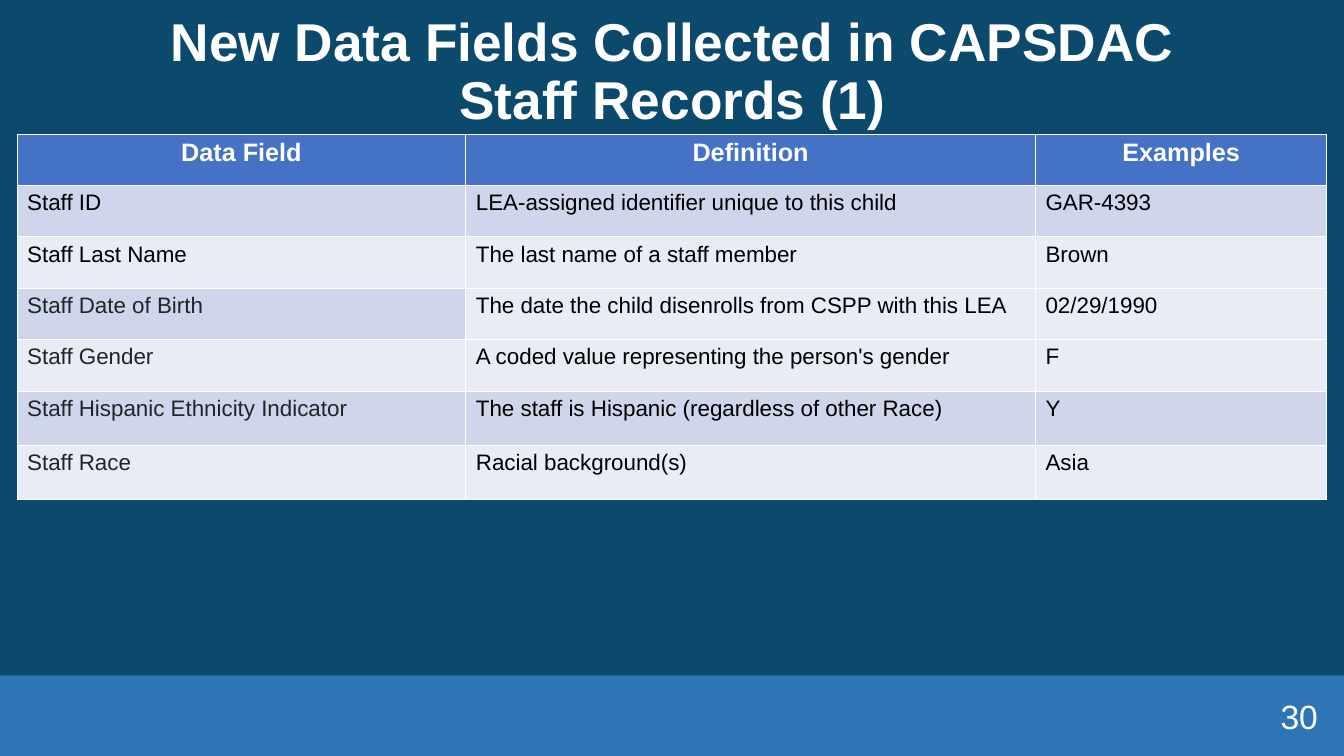
from dataclasses import dataclass

from lxml.etree import SubElement
from pptx import Presentation
from pptx.dml.color import RGBColor
from pptx.enum.shapes import MSO_SHAPE
from pptx.enum.text import MSO_ANCHOR, PP_ALIGN
from pptx.oxml.ns import qn
from pptx.slide import Slide
from pptx.table import _Cell
from pptx.text.text import _Paragraph
from pptx.util import Inches, Pt


@dataclass(frozen=True)
class Theme:
    font: str = "Arial"
    background: str = "0C4A6D"
    footer: str = "2E75B6"
    header: str = "4472C4"
    dark_band: str = "CFD5EA"
    light_band: str = "E9EBF5"
    white: str = "FFFFFF"
    black: str = "000000"
    charcoal: str = "212529"
    title_size: int = 38
    number_size: int = 24
    header_size: int = 18
    body_size: int = 16
    border_width: float = 0.75


@dataclass(frozen=True)
class TextStyle:
    size: int
    color: str
    bold: bool = False
    alignment: PP_ALIGN = PP_ALIGN.LEFT
    line_spacing: float = 1.0


@dataclass(frozen=True)
class TextBlock:
    text: str
    left: float
    top: float
    width: float
    height: float
    style: TextStyle


@dataclass(frozen=True)
class DataField:
    name: str
    definition: str
    example: str
    name_color: str
    name_fill: str
    detail_fill: str


THEME = Theme()
SLIDE_WIDTH, SLIDE_HEIGHT = 13.33, 7.5
FOOTER_HEIGHT = 0.8
MARGIN = 0.17
CONTENT_WIDTH = 13
COLUMN_WIDTHS = (4.45, 5.65, 2.89)
ROW_HEIGHTS = (0.51,) * 5 + (0.54,) * 2
HEADINGS = ("Data Field", "Definition", "Examples")

HEADER_STYLE = TextStyle(THEME.header_size, THEME.white, True, PP_ALIGN.CENTER)
BODY_STYLE = TextStyle(THEME.body_size, THEME.black)

TEXT_BLOCKS = (
    TextBlock(
        "New Data Fields Collected in CAPSDAC\nStaff Records (1)",
        MARGIN, 0, CONTENT_WIDTH, 1.45,
        TextStyle(THEME.title_size, THEME.white, True, PP_ALIGN.CENTER, 0.9),
    ),
    TextBlock(
        "30", 10.17, 6.9, 3, 0.4,
        TextStyle(THEME.number_size, THEME.white, alignment=PP_ALIGN.RIGHT),
    ),
)

DATA_FIELDS = (
    DataField("Staff ID", "LEA-assigned identifier unique to this child", "GAR-4393",
              THEME.black, THEME.dark_band, THEME.dark_band),
    DataField("Staff Last Name", "The last name of a staff member", "Brown",
              THEME.black, THEME.light_band, THEME.light_band),
    DataField("Staff Date of Birth", "The date the child disenrolls from CSPP with this LEA",
              "02/29/1990", THEME.charcoal, THEME.dark_band, THEME.light_band),
    DataField("Staff Gender", "A coded value representing the person's gender", "F",
              THEME.charcoal, THEME.light_band, THEME.light_band),
    DataField("Staff Hispanic Ethnicity Indicator",
              "The staff is Hispanic (regardless of other Race)", "Y",
              THEME.charcoal, THEME.dark_band, THEME.dark_band),
    DataField("Staff Race", "Racial background(s)", "Asia",
              THEME.charcoal, THEME.light_band, THEME.light_band),
)


def write_text(paragraph: _Paragraph, text: str, style: TextStyle) -> None:
    paragraph.text = text
    paragraph.alignment = style.alignment
    paragraph.line_spacing = style.line_spacing
    for run in paragraph.runs:
        run.font.name = THEME.font
        run.font.size = Pt(style.size)
        run.font.bold = style.bold
        run.font.color.rgb = RGBColor.from_string(style.color)


def add_text_block(slide: Slide, block: TextBlock) -> None:
    shape = slide.shapes.add_textbox(
        Inches(block.left), Inches(block.top), Inches(block.width), Inches(block.height)
    )
    shape.text_frame.word_wrap = True
    shape.text_frame.vertical_anchor = MSO_ANCHOR.MIDDLE
    write_text(shape.text_frame.paragraphs[0], block.text, block.style)


def add_footer(slide: Slide) -> None:
    shape = slide.shapes.add_shape(
        MSO_SHAPE.RECTANGLE, 0, Inches(SLIDE_HEIGHT - FOOTER_HEIGHT),
        Inches(SLIDE_WIDTH), Inches(FOOTER_HEIGHT),
    )
    shape.shadow.inherit = False
    shape.fill.solid()
    shape.fill.fore_color.rgb = RGBColor.from_string(THEME.footer)
    shape.line.fill.background()


def fill_cell(cell: _Cell, text: str, style: TextStyle, fill: str) -> None:
    properties = cell._tc.get_or_add_tcPr()
    for side in ("lnL", "lnR", "lnT", "lnB"):
        border = SubElement(properties, qn(f"a:{side}"), w=str(Pt(THEME.border_width)))
        border_fill = SubElement(border, qn("a:solidFill"))
        SubElement(border_fill, qn("a:srgbClr"), val=THEME.white)
    cell.fill.solid()
    cell.fill.fore_color.rgb = RGBColor.from_string(fill)
    write_text(cell.text_frame.paragraphs[0], text, style)


def add_field_table(slide: Slide) -> None:
    table = slide.shapes.add_table(
        len(ROW_HEIGHTS), len(COLUMN_WIDTHS), Inches(MARGIN), Inches(1.33),
        Inches(sum(COLUMN_WIDTHS)), Inches(sum(ROW_HEIGHTS)),
    ).table
    for column, width in zip(table.columns, COLUMN_WIDTHS):
        column.width = Inches(width)
    for row, height in zip(table.rows, ROW_HEIGHTS):
        row.height = Inches(height)
    for column_index, heading in enumerate(HEADINGS):
        fill_cell(table.cell(0, column_index), heading, HEADER_STYLE, THEME.header)
    for row_index, field in enumerate(DATA_FIELDS, start=1):
        name_style = TextStyle(THEME.body_size, field.name_color)
        fill_cell(table.cell(row_index, 0), field.name, name_style, field.name_fill)
        for column_index, text in enumerate((field.definition, field.example), start=1):
            fill_cell(table.cell(row_index, column_index), text, BODY_STYLE, field.detail_fill)


def main() -> None:
    presentation = Presentation()
    presentation.slide_width = Inches(SLIDE_WIDTH)
    presentation.slide_height = Inches(SLIDE_HEIGHT)
    slide = presentation.slides.add_slide(presentation.slide_layouts[6])
    slide.background.fill.solid()
    slide.background.fill.fore_color.rgb = RGBColor.from_string(THEME.background)
    add_footer(slide)
    add_field_table(slide)
    for block in TEXT_BLOCKS:
        add_text_block(slide, block)
    presentation.save("out.pptx")


if __name__ == "__main__":
    main()
